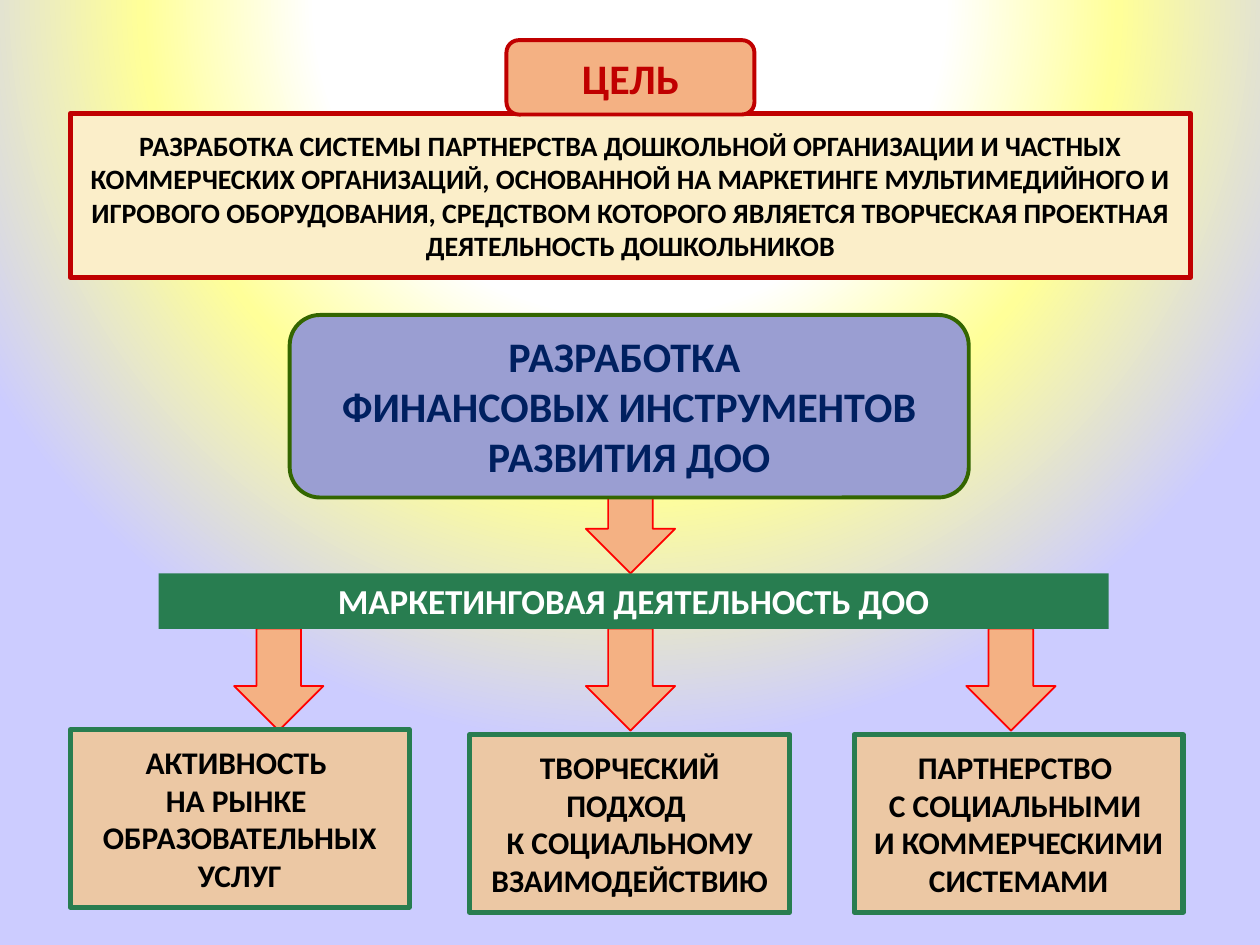
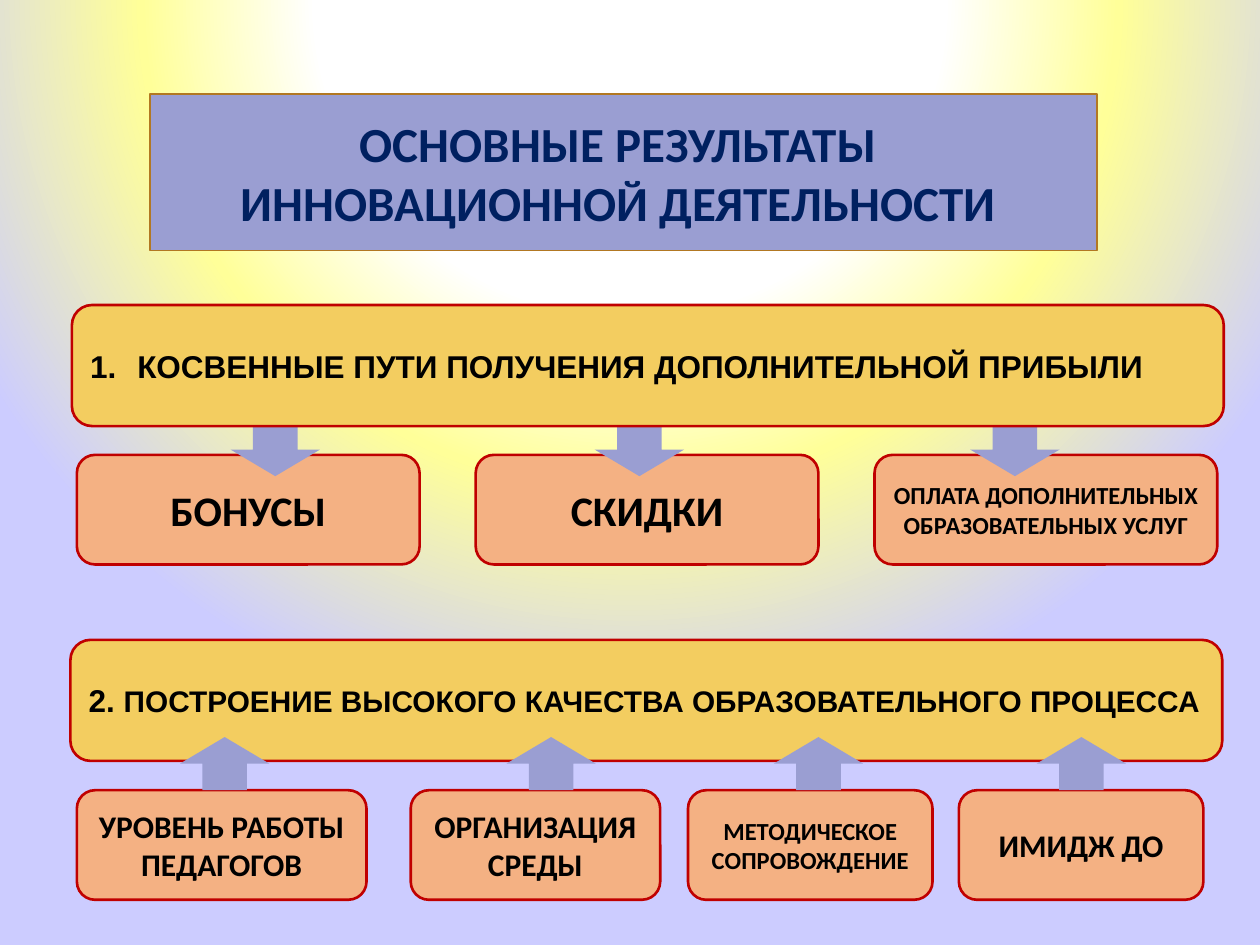
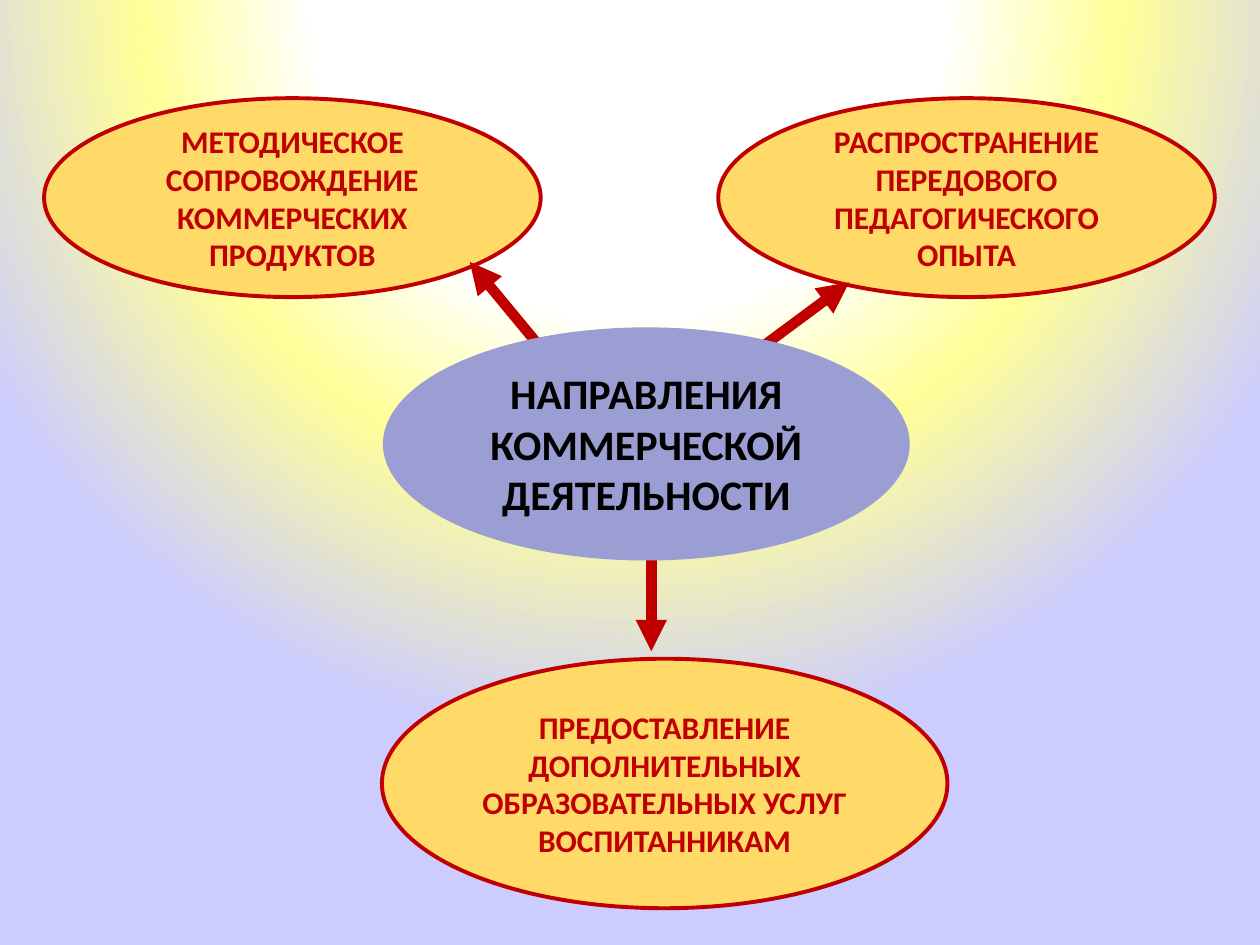
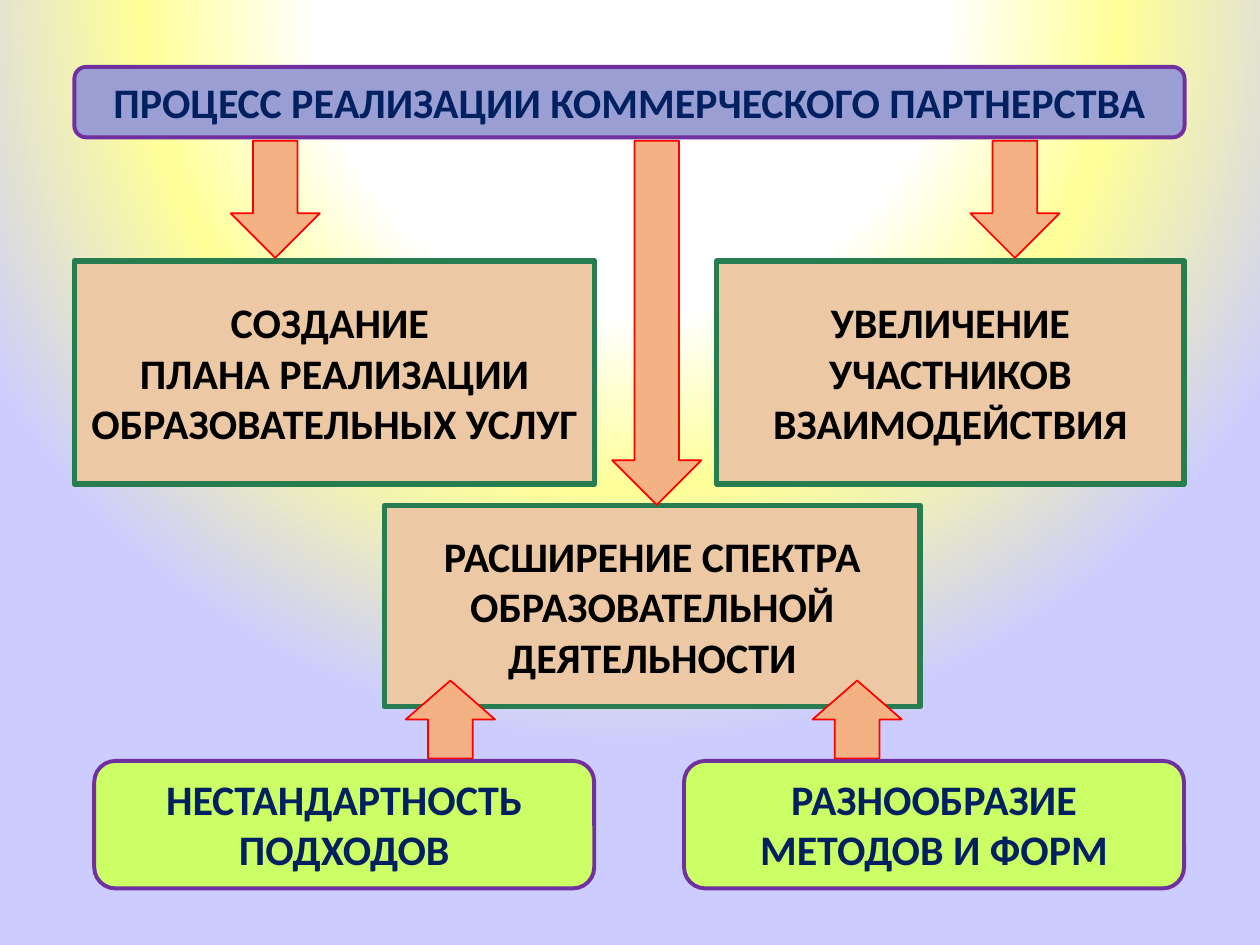
from collections import namedtuple

from lxml import etree
from pptx import Presentation
from pptx.dml.color import RGBColor
from pptx.enum.shapes import MSO_CONNECTOR, MSO_SHAPE
from pptx.enum.text import MSO_ANCHOR, MSO_AUTO_SIZE, PP_ALIGN
from pptx.oxml.ns import qn
from pptx.util import Cm, Pt

RECT, ROUND = MSO_SHAPE.RECTANGLE, MSO_SHAPE.ROUNDED_RECTANGLE
OVAL, DOWN = MSO_SHAPE.OVAL, MSO_SHAPE.DOWN_ARROW
STRAIGHT = MSO_CONNECTOR.STRAIGHT
TOP, MIDDLE = MSO_ANCHOR.TOP, MSO_ANCHOR.MIDDLE
GROW = MSO_AUTO_SIZE.SHAPE_TO_FIT_TEXT
CENTER, JUSTIFY = PP_ALIGN.CENTER, PP_ALIGN.JUSTIFY

BLACK = RGBColor(0x00, 0x00, 0x00)
WHITE = RGBColor(0xFF, 0xFF, 0xFF)
NAVY = RGBColor(0x00, 0x20, 0x60)
CRIMSON = RGBColor(0xC0, 0x00, 0x00)
RED = RGBColor(0xFF, 0x00, 0x00)
PEACH = RGBColor(0xF4, 0xB1, 0x83)
LILAC = RGBColor(0x9A, 0x9E, 0xD2)
GREEN = RGBColor(0x28, 0x7D, 0x50)
MOSS = RGBColor(0x33, 0x66, 0x00)
SAND = RGBColor(0xEC, 0xC8, 0xA4)
CREAM = RGBColor(0xFB, 0xEE, 0xC9)
GOLD = RGBColor(0xF3, 0xCD, 0x60)
AMBER = RGBColor(0xFF, 0xDA, 0x69)
BRONZE = RGBColor(0xB2, 0x78, 0x22)
PURPLE = RGBColor(0x70, 0x30, 0xA0)
LIME = RGBColor(0xCC, 0xFF, 0x66)
PALE = RGBColor(0xFF, 0xFF, 0x99)
MIST = RGBColor(0xCC, 0xCC, 0xFF)

GLOW = ((40, WHITE), (62, PALE), (95, MIST))
GLOW_RECT = {"l": 50, "t": -80, "r": 50, "b": 180}
ARROW_W = 1.8

Look = namedtuple("Look", "form fill edge weight", defaults=(None, 0))
CARD = Look(RECT, SAND, GREEN, 3)
CHIP = Look(ROUND, PEACH, CRIMSON, 1.5)
BAND = Look(ROUND, GOLD, CRIMSON, 1.5)
CLOUD = Look(OVAL, AMBER, CRIMSON, 2.25)
LABEL = Look(ROUND, LIME, PURPLE, 2.25)
WARM = Look(DOWN, PEACH, RED, 1)
COOL = Look(DOWN, LILAC)


def node(parent, tag, **attrs):
    """Append a drawing element with the given attributes."""
    item = etree.SubElement(parent, qn(tag))
    for key, value in attrs.items():
        item.set(key, str(value))
    return item


def add_page(deck):
    """Add a blank slide with the shared radial glow."""
    page = deck.slides.add_slide(deck.slide_layouts[6])
    page.background.fill.gradient()
    grad = page.element.find(".//" + qn("a:gradFill"))
    for child in list(grad):
        grad.remove(child)
    stops = node(grad, "a:gsLst")
    for place, color in GLOW:
        node(node(stops, "a:gs", pos=place * 1000), "a:srgbClr", val=color)
    path = node(grad, "a:path", path="circle")
    node(path, "a:fillToRect", **{side: part * 1000 for side, part in GLOW_RECT.items()})
    return page


def write(shape, text, size=18, color=BLACK, font="Calibri", align=CENTER,
          grow=False, lead="", lead_size=18, number=False):
    """Fill a shape with bold text, one paragraph per line."""
    frame = shape.text_frame
    frame.word_wrap = True
    frame.vertical_anchor = TOP if grow else MIDDLE
    if grow:
        frame.auto_size = GROW
    for index, line in enumerate(text.split("\n")):
        para = frame.add_paragraph() if index else frame.paragraphs[0]
        para.alignment = align
        if number:
            props = para._p.get_or_add_pPr()
            props.set("marL", str(Cm(0.95)))
            props.set("indent", str(Cm(-0.95)))
            node(props, "a:buFont", typeface="+mj-lt")
            node(props, "a:buAutoNum", type="arabicPeriod")
        for words, points in ((lead, lead_size), (line, size)):
            if words:
                run = para.add_run()
                run.text = words
                run.font.name, run.font.size = font, Pt(points)
                run.font.bold = True
                run.font.color.rgb = color


def add_box(page, look, place, text="", **style):
    """Draw a preset shape in a given look, with optional text."""
    shape = page.shapes.add_shape(look.form, *map(Cm, place))
    shape.shadow.inherit = False
    shape.fill.solid()
    shape.fill.fore_color.rgb = look.fill
    if look.edge is None:
        shape.line.fill.background()
    else:
        shape.line.color.rgb = look.edge
        shape.line.width = Pt(look.weight)
    if text:
        write(shape, text, **style)
    return shape


def add_arrows(page, look, lefts, top, height, flip=False):
    """Draw a row of block arrows, turned up when flipped."""
    for left in lefts:
        arrow = add_box(page, look, (left, top, ARROW_W, height))
        if flip:
            arrow.element.spPr.find(qn("a:xfrm")).set("flipV", "1")


def add_ray(page, start, end):
    """Draw a thick line ending in a triangle."""
    ray = page.shapes.add_connector(STRAIGHT, *map(Cm, start + end))
    ray.line.color.rgb = CRIMSON
    ray.line.width = Pt(6)
    props = ray.element.spPr
    node(props.find(qn("a:ln")), "a:tailEnd", type="triangle")
    node(props, "a:effectLst")


def goal_page(deck):
    """Build the slide with the goal and its market activity."""
    page = add_page(deck)
    add_arrows(page, WARM, (4.72, 11.81, 19.48), 12.67, 2.06)
    add_arrows(page, WARM, (11.81,), 9.5, 2.06)
    add_box(page, Look(ROUND, LILAC, MOSS, 2.25), (5.84, 6.35, 13.69, 3.68),
            "РАЗРАБОТКА \nФИНАНСОВЫХ ИНСТРУМЕНТОВ РАЗВИТИЯ ДОО",
            size=24, color=NAVY, grow=True)
    add_box(page, Look(RECT, GREEN), (3.2, 11.56, 19.15, 1.12),
            "МАРКЕТИНГОВАЯ ДЕЯТЕЛЬНОСТЬ ДОО", size=20, color=WHITE, grow=True)
    for left, top, width, text in (
        (1.42, 14.71, 6.83, "АКТИВНОСТЬ \nНА РЫНКЕ \nОБРАЗОВАТЕЛЬНЫХ УСЛУГ"),
        (9.47, 14.81, 6.45, "ТВОРЧЕСКИЙ ПОДХОД \nК СОЦИАЛЬНОМУ ВЗАИМОДЕЙСТВИЮ"),
        (17.22, 14.81, 6.63, "ПАРТНЕРСТВО \nС СОЦИАЛЬНЫМИ \nИ КОММЕРЧЕСКИМИ СИСТЕМАМИ"),
    ):
        add_box(page, CARD, (left, top, width, 3.58), text)
    add_box(page, Look(RECT, CREAM, CRIMSON, 3), (1.42, 2.29, 22.58, 3.3),
            "РАЗРАБОТКА СИСТЕМЫ ПАРТНЕРСТВА ДОШКОЛЬНОЙ ОРГАНИЗАЦИИ И ЧАСТНЫХ "
            "КОММЕРЧЕСКИХ ОРГАНИЗАЦИЙ, ОСНОВАННОЙ НА МАРКЕТИНГЕ МУЛЬТИМЕДИЙНОГО И "
            "ИГРОВОГО ОБОРУДОВАНИЯ, СРЕДСТВОМ КОТОРОГО ЯВЛЯЕТСЯ ТВОРЧЕСКАЯ ПРОЕКТНАЯ "
            "ДЕЯТЕЛЬНОСТЬ ДОШКОЛЬНИКОВ", size=16)
    add_box(page, Look(ROUND, PEACH, CRIMSON, 2.25), (10.21, 0.81, 5, 1.5),
            "ЦЕЛЬ", size=24, color=CRIMSON)


def result_page(deck):
    """Build the slide with the two main results."""
    page = add_page(deck)
    gains = (("БОНУСЫ", 24), ("СКИДКИ", 24),
             ("ОПЛАТА ДОПОЛНИТЕЛЬНЫХ ОБРАЗОВАТЕЛЬНЫХ УСЛУГ", 14))
    for index, (text, size) in enumerate(gains):
        add_box(page, CHIP, (1.55 + index * 8.04, 9.17, 6.91, 2.21), text, size=size)
    add_box(page, Look(RECT, LILAC, BRONZE, 1), (3.02, 1.9, 19.1, 3.15),
            "ОСНОВНЫЕ РЕЗУЛЬТАТЫ \nИННОВАЦИОННОЙ ДЕЯТЕЛЬНОСТИ ", size=28, color=NAVY)
    add_arrows(page, COOL, (4.65, 11.99, 19.56), 8.53, 1.07)
    add_box(page, BAND, (1.45, 6.15, 23.22, 2.44),
            "КОСВЕННЫЕ ПУТИ ПОЛУЧЕНИЯ ДОПОЛНИТЕЛЬНОЙ ПРИБЫЛИ",
            font="Arial", align=JUSTIFY, number=True)
    add_box(page, BAND, (1.42, 12.9, 23.22, 2.44),
            "ПОСТРОЕНИЕ ВЫСОКОГО КАЧЕСТВА ОБРАЗОВАТЕЛЬНОГО ПРОЦЕССА",
            size=17, font="Arial", align=JUSTIFY, lead="2. ")
    for left, width, text, size in (
        (1.55, 5.84, "УРОВЕНЬ РАБОТЫ ПЕДАГОГОВ", 18),
        (8.28, 5.03, "ОРГАНИЗАЦИЯ СРЕДЫ", 18),
        (13.87, 4.93, "МЕТОДИЧЕСКОЕ СОПРОВОЖДЕНИЕ", 14),
        (19.33, 4.93, "ИМИДЖ ДО", 18),
    ):
        add_box(page, CHIP, (left, 15.93, width, 2.21), text, size=size)
    add_arrows(page, COOL, (3.63, 10.21, 15.6, 20.9), 14.86, 1.07, flip=True)


def field_page(deck):
    """Build the slide with the hub and its three fields."""
    page = add_page(deck)
    for place, text in (
        ((0.89, 1.98, 10.01, 4.01), "МЕТОДИЧЕСКОЕ СОПРОВОЖДЕНИЕ КОММЕРЧЕСКИХ ПРОДУКТОВ"),
        ((14.48, 1.98, 10.01, 4.01), "РАСПРОСТРАНЕНИЕ ПЕРЕДОВОГО ПЕДАГОГИЧЕСКОГО ОПЫТА"),
        ((7.7, 13.28, 11.4, 5.03),
         "ПРЕДОСТАВЛЕНИЕ ДОПОЛНИТЕЛЬНЫХ ОБРАЗОВАТЕЛЬНЫХ УСЛУГ ВОСПИТАННИКАМ"),
    ):
        add_box(page, CLOUD, place, text, color=CRIMSON)
    for start, end in (
        ((10.9, 7.01), (9.47, 5.28)),
        ((15.34, 7.01), (17.12, 5.69)),
        ((13.13, 11.25), (13.13, 13.13)),
    ):
        add_ray(page, start, end)
    add_box(page, Look(OVAL, LILAC), (7.72, 6.6, 10.62, 4.7),
            "НАПРАВЛЕНИЯ КОММЕРЧЕСКОЙ ДЕЯТЕЛЬНОСТИ", size=24, grow=True)


def process_page(deck):
    """Build the slide with the partnership process."""
    page = add_page(deck)
    add_box(page, Look(ROUND, LILAC, PURPLE, 2.25), (1.5, 1.35, 22.38, 1.42),
            "ПРОЦЕСС РЕАЛИЗАЦИИ КОММЕРЧЕСКОГО ПАРТНЕРСТВА",
            size=24, color=NAVY, grow=True)
    for place, text in (
        ((1.5, 5.26, 10.49, 4.5), "СОЗДАНИЕ \nПЛАНА РЕАЛИЗАЦИИ ОБРАЗОВАТЕЛЬНЫХ УСЛУГ"),
        ((14.45, 5.26, 9.42, 4.5), "УВЕЛИЧЕНИЕ УЧАСТНИКОВ ВЗАИМОДЕЙСТВИЯ"),
        ((7.75, 10.19, 10.8, 4.06), "РАСШИРЕНИЕ СПЕКТРА ОБРАЗОВАТЕЛЬНОЙ ДЕЯТЕЛЬНОСТИ"),
    ):
        add_box(page, CARD, place, text, size=24)
    add_arrows(page, WARM, (4.65, 19.56), 2.84, 2.36)
    add_arrows(page, WARM, (12.34,), 2.84, 7.34)
    for left, text in ((1.9, "НЕСТАНДАРТНОСТЬ ПОДХОДОВ"),
                       (13.79, "РАЗНООБРАЗИЕ МЕТОДОВ И ФОРМ")):
        add_box(page, LABEL, (left, 15.34, 10.08, 2.57), text,
                size=24, color=NAVY, grow=True)
    add_arrows(page, WARM, (8.18, 16.38), 13.72, 1.57, flip=True)


def main():
    """Build and save the deck."""
    deck = Presentation()
    deck.slide_width, deck.slide_height = Cm(25.4), Cm(19.05)
    for build in (goal_page, result_page, field_page, process_page):
        build(deck)
    deck.save("out.pptx")


if __name__ == "__main__":
    main()
